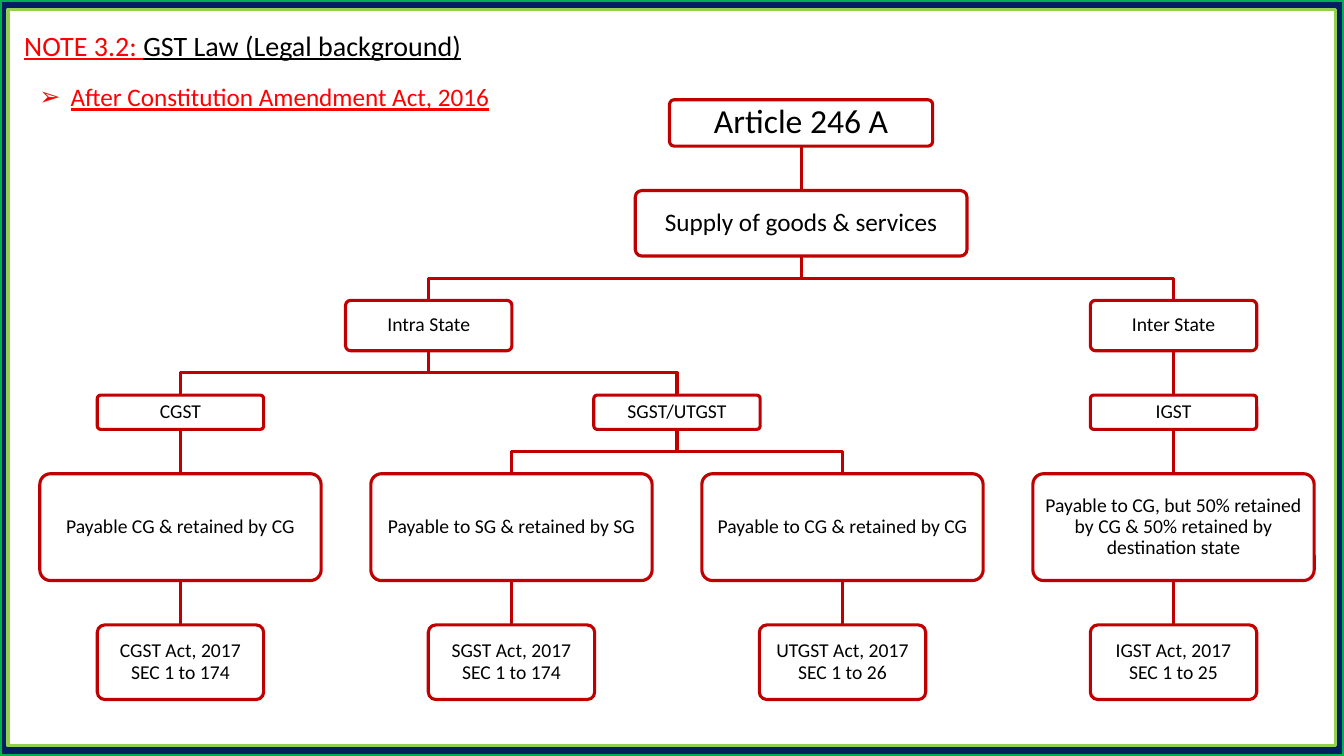
from dataclasses import dataclass

from lxml.etree import SubElement
from pptx import Presentation
from pptx.dml.color import RGBColor
from pptx.enum.shapes import MSO_CONNECTOR as Connector, MSO_SHAPE as Shape
from pptx.enum.text import MSO_ANCHOR as Anchor, PP_ALIGN as Align
from pptx.oxml.ns import qn
from pptx.util import Inches, Pt

FONT = "Calibri"
COLORS = {
    "navy": "002060",
    "green": "00B050",
    "lime": "92D050",
    "white": "FFFFFF",
    "red": "FF0000",
    "dark red": "C00000",
    "black": "000000",
}

# Leaf boxes sit in evenly spaced columns
FIRST_CENTER = 1.79
COLUMN_STEP = 3.283


@dataclass
class Level:
    top: float
    width: float
    height: float
    size: int = 14
    inset: float = 0.08

    @property
    def bottom(self):
        return self.top + self.height


LEVELS = [
    Level(0.99, 2.61, 0.46, 24, 0.11),
    Level(1.89, 3.29, 0.65, 18, 0.09),
    Level(2.98, 1.65, 0.5),
    Level(3.92, 1.65, 0.34),
    Level(4.7, 2.79, 1.06),
    Level(6.2, 1.65, 0.74),
]

# Each node is (text, children); \v is a line break
GST_TREE = ("Article 246 A", [("Supply of goods & services", [
    ("Intra State", [
        ("CGST", [
            ("Payable CG & retained by CG", [("CGST Act, 2017\vSEC 1 to 174", [])]),
        ]),
        ("SGST/UTGST", [
            ("Payable to SG & retained by SG", [("SGST Act, 2017\vSEC 1 to 174", [])]),
            ("Payable to CG & retained by CG", [("UTGST Act, 2017\vSEC 1 to 26", [])]),
        ]),
    ]),
    ("Inter State", [
        ("IGST", [
            ("Payable to CG, but 50% retained by CG & 50% retained by destination state",
             [("IGST Act, 2017\vSEC 1 to 25", [])]),
        ]),
    ]),
])])


def rgb(name):
    return RGBColor.from_string(COLORS[name])


def format_run(run, size, color, underline=False):
    run.font.name = FONT
    run.font.size = Pt(size)
    run.font.color.rgb = rgb(color)
    run.font.underline = underline


def set_line(shape, color, width=2.25):
    shape.line.color.rgb = rgb(color)
    shape.line.width = Pt(width)


def add_frame(slide, position, left, top, width, height, fill, line, line_width):
    """Add a bordered rectangle behind the placeholders."""
    frame = slide.shapes.add_shape(
        Shape.RECTANGLE, Inches(left), Inches(top), Inches(width), Inches(height))
    frame.shadow.inherit = False
    frame.fill.solid()
    frame.fill.fore_color.rgb = rgb(fill)
    set_line(frame, line, line_width)
    slide.shapes._spTree.insert(2 + position, frame._element)


def fill_heading(placeholder, left, top, width, height, size, parts):
    """Place a placeholder and write underlined (text, color) parts in it."""
    placeholder.left, placeholder.top = Inches(left), Inches(top)
    placeholder.width, placeholder.height = Inches(width), Inches(height)
    text_frame = placeholder.text_frame
    text_frame.word_wrap = True
    text_frame.vertical_anchor = Anchor.TOP
    paragraph = text_frame.paragraphs[0]
    paragraph.alignment = Align.LEFT
    paragraph.space_before = Pt(0)
    for text, color in parts:
        run = paragraph.add_run()
        run.text = text
        format_run(run, size, color, underline=True)
    return paragraph


def add_bullet(paragraph, character, indent):
    properties = paragraph._p.get_or_add_pPr()
    properties.set("marL", str(Inches(indent)))
    properties.set("indent", str(-Inches(indent)))
    SubElement(properties, qn("a:buChar"), char=character)


def add_box(slide, center, level, text):
    box = slide.shapes.add_shape(
        Shape.ROUNDED_RECTANGLE, Inches(center - level.width / 2), Inches(level.top),
        Inches(level.width), Inches(level.height))
    box.adjustments[0] = 0.1
    box.shadow.inherit = False
    box.fill.background()
    set_line(box, "dark red")

    text_frame = box.text_frame
    text_frame.word_wrap = True
    text_frame.vertical_anchor = Anchor.MIDDLE
    text_frame.margin_left = text_frame.margin_right = Inches(level.inset)
    text_frame.margin_top = text_frame.margin_bottom = Inches(level.inset)
    paragraph = text_frame.paragraphs[0]
    paragraph.text = text
    paragraph.alignment = Align.CENTER
    paragraph.line_spacing = 0.9
    for run in paragraph.runs:
        format_run(run, level.size, "black")
    for line_break in paragraph._p.findall(qn("a:br")):
        SubElement(line_break, qn("a:rPr"), sz=str(level.size * 100))


def add_link(slide, parent_x, top, child_x, bottom):
    """Join parent to child: straight when aligned, otherwise stepped."""
    if abs(parent_x - child_x) < 0.01:
        link = slide.shapes.add_connector(
            Connector.STRAIGHT, Inches(parent_x), Inches(top),
            Inches(child_x), Inches(bottom))
        SubElement(link._element.spPr, qn("a:effectLst"))
    else:
        middle = (top + bottom) / 2
        builder = slide.shapes.build_freeform(Inches(parent_x), Inches(top))
        corners = [(parent_x, middle), (child_x, middle), (child_x, bottom)]
        builder.add_line_segments(
            [(Inches(x), Inches(y)) for x, y in corners], close=False)
        link = builder.convert_to_shape()
        link.shadow.inherit = False
        link.fill.background()
    set_line(link, "dark red")


def add_branch(slide, node, columns, depth=0):
    """Draw a node centred over its children and return its centre."""
    text, children = node
    level = LEVELS[depth]
    centers = [add_branch(slide, child, columns, depth + 1) for child in children]
    center = (centers[0] + centers[-1]) / 2 if centers else next(columns)
    for child_center in centers:
        add_link(slide, center, level.bottom, child_center, LEVELS[depth + 1].top)
    add_box(slide, center, level, text)
    return center


def main():
    presentation = Presentation()
    presentation.slide_width = Inches(13.33)
    presentation.slide_height = Inches(7.5)
    slide = presentation.slides.add_slide(presentation.slide_layouts[1])

    # Double border
    add_frame(slide, 0, 0, 0, 13.33, 7.5, "navy", "green", 3)
    add_frame(slide, 1, 0.08, 0.09, 13.17, 7.31, "white", "lime", 2.25)

    # Headings
    fill_heading(slide.shapes.title, 0.14, 0.23, 5.35, 0.44, 20, [
        ("NOTE 3.2: ", "red"), ("GST Law (Legal background)", "black")])
    subheading = fill_heading(slide.placeholders[1], 0.29, 0.76, 6.16, 0.4, 18, [
        ("After Constitution Amendment Act, 2016", "red")])
    add_bullet(subheading, "➢", 0.31)

    # Hierarchy chart
    columns = (FIRST_CENTER + COLUMN_STEP * index for index in range(4))
    add_branch(slide, GST_TREE, columns)

    presentation.save("out.pptx")


if __name__ == "__main__":
    main()
